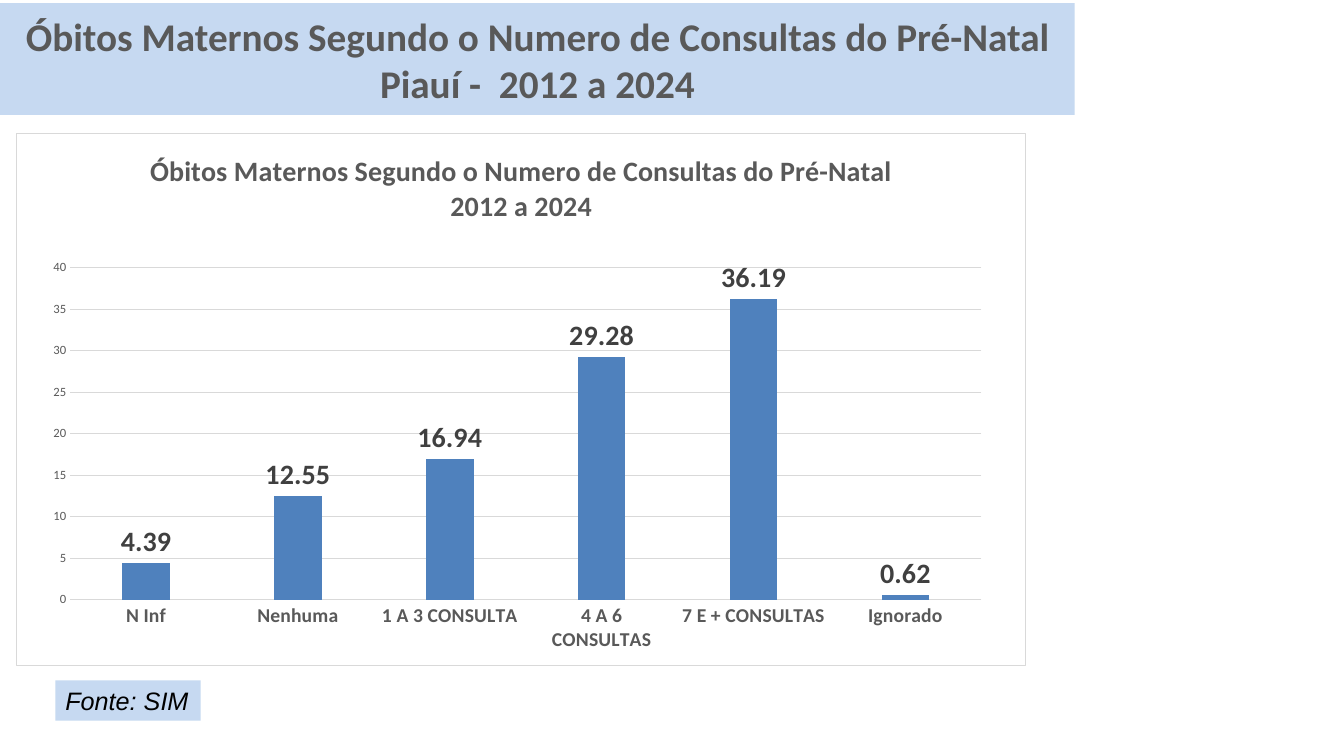
from lxml import etree
from pptx import Presentation
from pptx.chart.data import CategoryChartData
from pptx.dml.color import RGBColor
from pptx.enum.chart import XL_CHART_TYPE as ChartType, XL_LABEL_POSITION as LabelPosition
from pptx.enum.chart import XL_TICK_MARK as TickMark
from pptx.enum.shapes import MSO_SHAPE as Shape
from pptx.enum.text import MSO_ANCHOR as Anchor, PP_ALIGN as Align
from pptx.oxml import parse_xml
from pptx.oxml.ns import nsdecls, qn
from pptx.util import Inches, Pt

PALE_BLUE = RGBColor(0xC6, 0xD9, 0xF1)
BAR_BLUE = RGBColor(0x4F, 0x81, 0xBD)
GREY = RGBColor(0x59, 0x59, 0x59)
DARK_GREY = RGBColor(0x40, 0x40, 0x40)
RULE_GREY = RGBColor(0xD9, 0xD9, 0xD9)
WHITE = RGBColor(0xFF, 0xFF, 0xFF)
BLACK = RGBColor(0, 0, 0)

HEADING = "Óbitos Maternos Segundo o Numero de Consultas do Pré-Natal"
CONSULTATIONS = {
    "N Inf": 4.39,
    "Nenhuma": 12.55,
    "1 A 3 CONSULTA": 16.94,
    "4 A 6 CONSULTAS": 29.28,
    "7 E + CONSULTAS": 36.19,
    "Ignorado": 0.62,
}
PLOT_SHARES = {"x": 0.053, "y": 0.252, "w": 0.903, "h": 0.624}


def style_font(font, size, color=GREY, bold=False, italic=False, name="Calibri"):
    """Apply one text format to a font."""
    font.name, font.size, font.bold, font.italic = name, Pt(size), bold, italic
    font.color.rgb = color


def write_lines(frame, lines, align=Align.CENTER, **style):
    """Write each line as a paragraph of a text frame."""
    for index, line in enumerate(lines):
        para = frame.add_paragraph() if index else frame.paragraphs[0]
        para.alignment = align
        span = para.add_run()
        span.text = line
        style_font(span.font, **style)


def add_band(page, box, lines, wrap=True, **style):
    """Place a pale blue rectangle with text in the given box."""
    band = page.shapes.add_shape(Shape.RECTANGLE, *map(Inches, box))
    band.shadow.inherit = False
    band.fill.solid()
    band.fill.fore_color.rgb = PALE_BLUE
    band.line.fill.background()
    frame = band.text_frame
    frame.word_wrap = wrap
    frame.vertical_anchor = Anchor.MIDDLE
    write_lines(frame, lines, **style)


def style_line(line):
    """Make a line thin and pale grey."""
    line.color.rgb = RULE_GREY
    line.width = Pt(0.75)


def frame_chart(chart):
    """Give the chart a white ground, a grey border and a fixed plot area."""
    ground = parse_xml(
        f'<c:spPr {nsdecls("c", "a")}>'
        f'<a:solidFill><a:srgbClr val="{WHITE}"/></a:solidFill>'
        f'<a:ln w="{Pt(0.75)}"><a:solidFill><a:srgbClr val="{RULE_GREY}"/></a:solidFill></a:ln>'
        '</c:spPr>')
    body = chart.element.find(qn("c:chart"))
    body.addnext(ground)
    plot_area = body.find(qn("c:plotArea"))
    for layout in plot_area.findall(qn("c:layout")):
        plot_area.remove(layout)
    layout = etree.Element(qn("c:layout"))
    manual = etree.SubElement(layout, qn("c:manualLayout"))
    settings = {"layoutTarget": "inner", "xMode": "edge", "yMode": "edge", **PLOT_SHARES}
    for tag, value in settings.items():
        etree.SubElement(manual, qn(f"c:{tag}")).set("val", str(value))
    plot_area.insert(0, layout)


def style_axes(chart):
    """Format both axes and the gridlines."""
    for axis, size, bold in ((chart.category_axis, 14, True), (chart.value_axis, 9, False)):
        axis.major_tick_mark = axis.minor_tick_mark = TickMark.NONE
        style_font(axis.tick_labels.font, size, bold=bold)
    style_line(chart.category_axis.format.line)
    values = chart.value_axis
    values.minimum_scale, values.maximum_scale, values.major_unit = 0, 40, 5
    values.format.line.fill.background()
    style_line(values.major_gridlines.format.line)


def add_consultation_chart(page, box):
    """Place the column chart of consultations in the given box."""
    data = CategoryChartData()
    data.categories = list(CONSULTATIONS)
    data.add_series("Series 1", list(CONSULTATIONS.values()))
    chart = page.shapes.add_chart(ChartType.COLUMN_CLUSTERED, *map(Inches, box), data).chart
    style_font(chart.font, 10, BLACK)
    chart.has_legend = False
    write_lines(chart.chart_title.text_frame, [HEADING, "2012 a 2024"], size=20, bold=True)
    style_axes(chart)
    plot = chart.plots[0]
    plot.gap_width, plot.overlap, plot.vary_by_categories = 219, -27, False
    bars = plot.series[0]
    bars.format.fill.solid()
    bars.format.fill.fore_color.rgb = BAR_BLUE
    labels = bars.data_labels
    labels.show_value = True
    labels.position = LabelPosition.OUTSIDE_END
    style_font(labels.font, 20, DARK_GREY, bold=True)
    frame_chart(chart)


def main():
    """Build the slide and save the deck."""
    deck = Presentation()
    deck.slide_width, deck.slide_height = Inches(13.33), Inches(7.5)
    page = deck.slides.add_slide(deck.slide_layouts[6])
    add_band(page, (0, 0.03, 10.66, 1.11), [HEADING, "Piauí -  2012 a 2024"], size=28, bold=True)
    add_consultation_chart(page, (0.16, 1.32, 10.02, 5.29))
    add_band(page, (0.55, 6.75, 1.44, 0.4), ["Fonte: SIM"], wrap=False, align=Align.JUSTIFY,
             size=18, color=BLACK, italic=True, name="Arial")
    deck.save("out.pptx")


if __name__ == "__main__":
    main()
